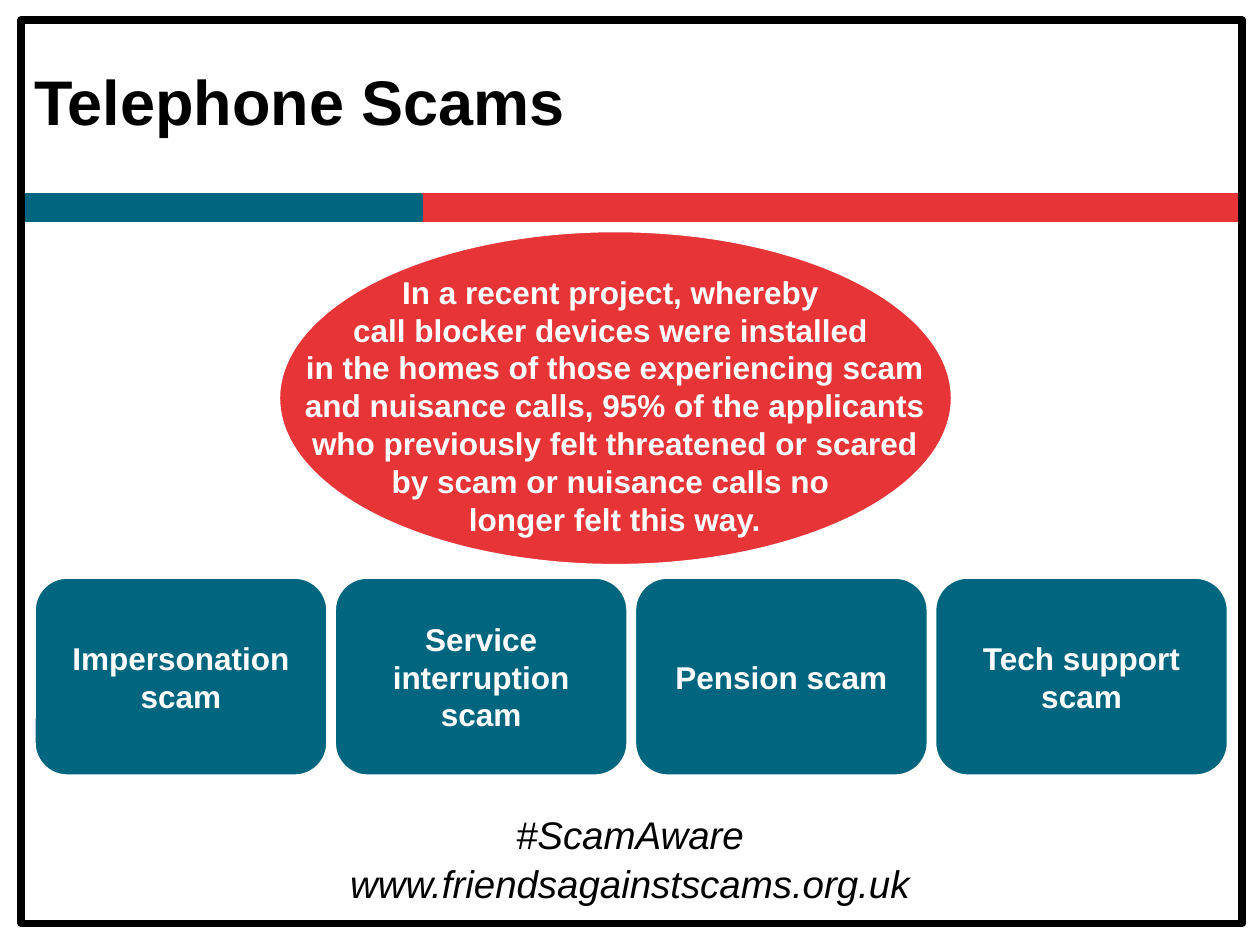
from dataclasses import dataclass

import pptx
import pptx.dml.color
import pptx.enum.shapes
import pptx.enum.text
import pptx.util
from pptx.util import Inches

SHAPE = pptx.enum.shapes.MSO_SHAPE
ALIGN = pptx.enum.text.PP_ALIGN
ANCHOR = pptx.enum.text.MSO_ANCHOR


@dataclass(frozen=True)
class Theme:
    font: str = "Arial"
    black: str = "000000"
    white: str = "FFFFFF"
    red: str = "E73437"
    teal: str = "006680"
    title: int = 36
    body: int = 18
    footer: int = 22
    outline: float = 2
    frame: float = 4.5


T = Theme()


def rgb(value):
    return pptx.dml.color.RGBColor.from_string(value)


def write(tf, *lines, size=T.body, color=T.white, bold=False, italic=False,
          align=ALIGN.CENTER, anchor=ANCHOR.MIDDLE):
    tf.word_wrap = True
    tf.vertical_anchor = anchor
    for i, line in enumerate(lines):
        p = tf.paragraphs[0] if i == 0 else tf.add_paragraph()
        p.alignment = align
        r = p.add_run()
        r.text = line
        r.font.name = T.font
        r.font.size = pptx.util.Pt(size)
        r.font.bold = bold
        r.font.italic = italic
        r.font.color.rgb = rgb(color)


def add_box(s, kind, left, top, width, height, fill=None, line=T.white,
            weight=T.outline):
    sp = s.shapes.add_shape(kind, Inches(left), Inches(top), Inches(width),
                            Inches(height))
    sp.shadow.inherit = False
    if fill:
        sp.fill.solid()
        sp.fill.fore_color.rgb = rgb(fill)
    else:
        sp.fill.background()
    sp.line.color.rgb = rgb(line)
    sp.line.width = pptx.util.Pt(weight)
    return sp


def add_text(s, left, top, width, height, *lines, **style):
    sp = s.shapes.add_textbox(Inches(left), Inches(top), Inches(width),
                              Inches(height))
    write(sp.text_frame, *lines, **style)


def add_frame(s, left, top, width, height):
    right = left + width
    bar_top, bar_height = top + 1.39, 0.2
    red_left = left + 0.25
    add_box(s, SHAPE.RECTANGLE, red_left, bar_top, right - red_left,
            bar_height, T.red, T.red)
    add_box(s, SHAPE.RECTANGLE, left, bar_top, 3.17, bar_height, T.teal, T.teal)
    add_box(s, SHAPE.RECTANGLE, left, top, width, height, line=T.black,
            weight=T.frame)


def add_title(s, left, top, width, height, text):
    sp = s.shapes.title
    sp.left, sp.top = Inches(left), Inches(top)
    sp.width, sp.height = Inches(width), Inches(height)
    write(sp.text_frame, text, size=T.title, color=T.black, bold=True,
          align=ALIGN.LEFT)


def add_finding(s, left, top, width, height, *lines):
    add_box(s, SHAPE.OVAL, left, top, width, height, T.red)
    add_text(s, left + 0.05, top + 0.11, width - 0.11, height - 0.11, *lines,
             bold=True)


def add_scam_cards(s, left, top, width, height, labels, gap=0.05):
    card_width = (width - gap * (len(labels) - 1)) / len(labels)
    for i, label in enumerate(labels):
        sp = add_box(s, SHAPE.ROUNDED_RECTANGLE, left + i * (card_width + gap),
                     top, card_width, height, T.teal)
        write(sp.text_frame, label, bold=True)


def add_footer(s, left, top, width, height, lines):
    pitch = 0.39
    for i, line in enumerate(lines):
        add_text(s, left, top + i * pitch, width, height - pitch, line,
                 size=T.footer, color=T.black, italic=True, anchor=ANCHOR.TOP)


def main():
    prs = pptx.Presentation()
    prs.slide_width, prs.slide_height = Inches(10), Inches(7.5)
    s = prs.slides.add_slide(prs.slide_layouts[5])
    add_footer(s, 0, 6.39, 10, 0.86,
               ["#ScamAware", "www.friendsagainstscams.org.uk"])
    add_frame(s, 0.17, 0.16, 9.69, 7.17)
    add_title(s, 0.17, 0.17, 9.42, 1.25, "Telephone Scams")
    add_finding(s, 2.21, 1.83, 5.35, 2.66,
                "In a recent project, whereby ",
                "call blocker devices were installed ",
                "in the homes of those experiencing scam and nuisance calls, "
                "95% of the applicants who previously felt threatened or "
                "scared by scam or nuisance calls no ",
                "longer felt this way.")
    add_scam_cards(s, 0.27, 4.58, 9.48, 1.58,
                   ["Impersonation scam", "Service interruption scam",
                    "Pension scam", "Tech support scam"])
    prs.save("out.pptx")


if __name__ == "__main__":
    main()
